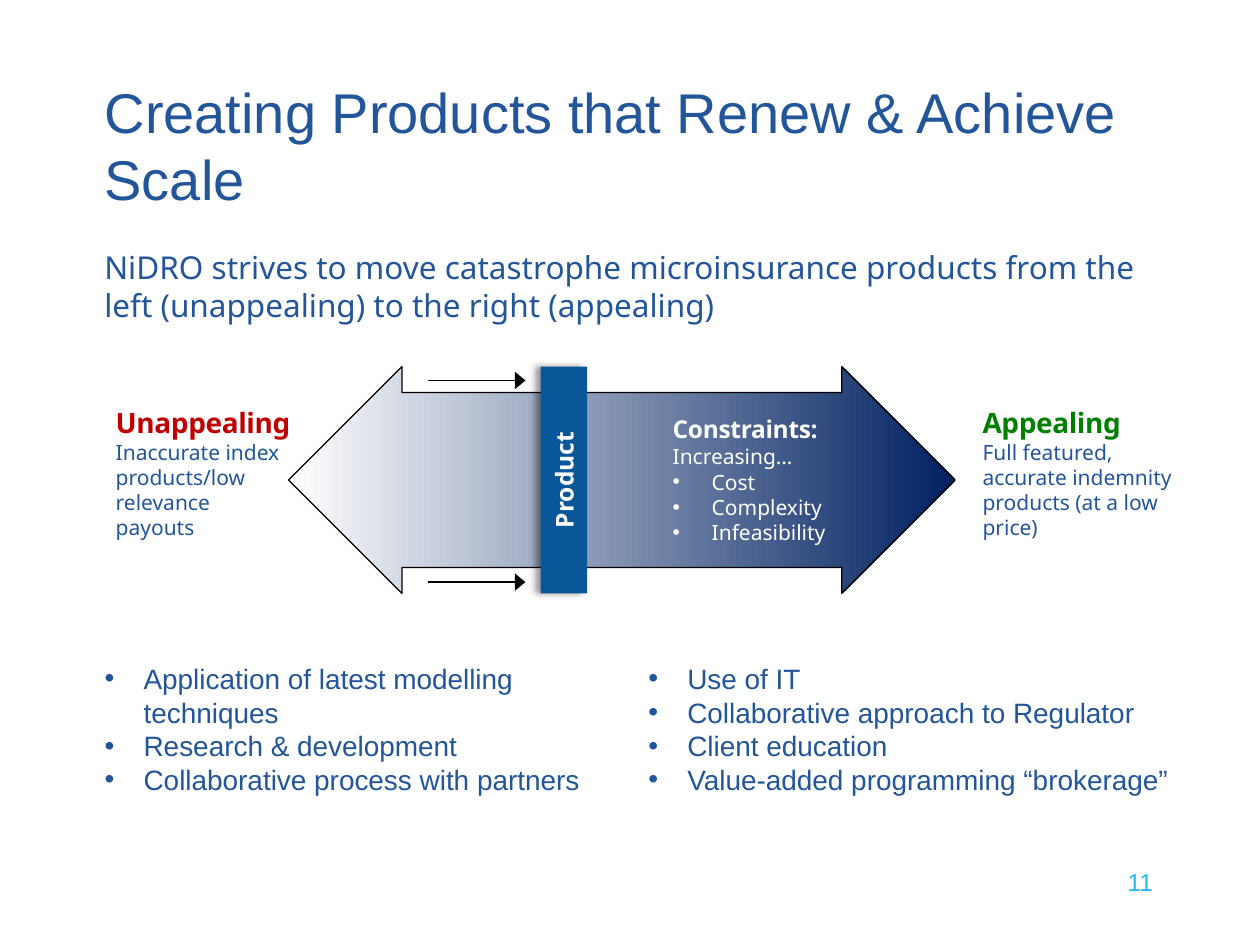
from lxml import etree
from pptx import Presentation
from pptx.dml.color import RGBColor
from pptx.enum import shapes, text
from pptx.oxml import parse_xml
from pptx.oxml.ns import nsdecls, qn
from pptx import util as u


class Theme:
    blue, bar, cyan = "225599", "095799", "22BBEE"
    red, green, navy = "C00000", "008000", "002060"
    black, white = "000000", "FFFFFF"
    sans, humanist = "Arial", "Noto Sans"
    title, lead, head, label, small = 32, 18, 16, 14, 12
    leading = 1.2
    indent = u.Inches(0.31)


prs = Presentation()
prs.slide_width, prs.slide_height = u.Inches(10), u.Inches(7.5)
col, row = prs.slide_width / 100, prs.slide_height / 75
slide = prs.slides.add_slide(prs.slide_layouts[1])


def grid(left, top, width, height):
    """Turn grid columns and rows into a position and a size."""
    return [round(n) for n in (left * col, top * row, width * col, height * row)]


def write(sp, lines, anchor=text.MSO_ANCHOR.TOP, align=text.PP_ALIGN.LEFT):
    """Fill a shape with (text, size, font, colour, bold, bulleted) lines."""
    tf = sp.text_frame
    tf.word_wrap = True
    tf.auto_size = text.MSO_AUTO_SIZE.NONE
    tf.vertical_anchor = anchor
    for i, (words, size, font, colour, bold, bulleted) in enumerate(lines):
        p = tf.add_paragraph() if i else tf.paragraphs[0]
        if bulleted:
            pPr = p._p.get_or_add_pPr()
            pPr.set("marL", str(Theme.indent))
            pPr.set("indent", str(-Theme.indent))
            etree.SubElement(pPr, qn("a:buFont")).set("typeface", Theme.sans)
            etree.SubElement(pPr, qn("a:buChar")).set("char", "•")
        p.alignment = align
        p.space_before = p.space_after = u.Pt(0)
        p.line_spacing = u.Pt(round(size * Theme.leading, 1))
        r = p.add_run()
        r.text = words
        r.font.size, r.font.name, r.font.bold = u.Pt(size), font, bold
        r.font.color.rgb = RGBColor.from_string(colour)


# Title and two-column list in the template's placeholders
title, body = slide.placeholders
title.left, title.top, title.width, title.height = grid(7.3, 8.4, 85, 6.2)
write(title, [("Creating Products that Renew & Achieve Scale",
               Theme.title, Theme.sans, Theme.blue, False, False)],
      text.MSO_ANCHOR.MIDDLE)

body.left, body.top, body.width, body.height = grid(7.3, 52, 88.3, 11.9)
actions = ["Application of latest modelling techniques", "Research & development",
           "Collaborative process with partners", "Use of IT",
           "Collaborative approach to Regulator", "Client education",
           "Value-added programming “brokerage”"]
write(body, [(a, Theme.head, Theme.sans, Theme.blue, False, True) for a in actions])
body.text_frame._txBody.bodyPr.set("numCol", "2")

# Double arrow from unappealing to appealing
band_top, band_height = 29.1, 18
sp = slide.shapes.add_shape(shapes.MSO_SHAPE.LEFT_RIGHT_ARROW,
                            *grid(22.9, band_top, 52.9, band_height))
sp.shadow.inherit = False
sp.adjustments[0], sp.adjustments[1] = 0.772, 0.5
sp.fill.gradient()
sp.fill.gradient_angle = 0
for stop, colour in zip(sp.fill.gradient_stops, (Theme.white, Theme.navy)):
    stop.color.rgb = RGBColor.from_string(colour)
sp.line.color.rgb = RGBColor.from_string(Theme.black)
sp.line.width = u.Pt(0.75)

# Product bar across the arrow, with its shadow to the left
bar = slide.shapes.add_shape(shapes.MSO_SHAPE.RECTANGLE,
                             *grid(42.9, band_top, 3.7, band_height))
bar.fill.solid()
bar.fill.fore_color.rgb = RGBColor.from_string(Theme.bar)
bar.line.fill.background()
bar._element.spPr.append(parse_xml(
    f'<a:effectLst {nsdecls("a")}><a:outerShdw blurRad="{u.Pt(4)}" dist="{u.Pt(3)}" '
    f'dir="10800000" rotWithShape="0"><a:srgbClr val="{Theme.black}">'
    '<a:alpha val="40000"/></a:srgbClr></a:outerShdw></a:effectLst>'))
write(bar, [("Product", Theme.label, Theme.humanist, Theme.white, True, False)],
      text.MSO_ANCHOR.MIDDLE, text.PP_ALIGN.CENTER)
bar.text_frame._txBody.bodyPr.set("vert", "vert270")

# Small arrows pushing the bar to the right
for y in (30.2, 46.2):
    x1, y1, length, _ = grid(34, y, 7.7, 0)
    cxn = slide.shapes.add_connector(shapes.MSO_CONNECTOR.STRAIGHT,
                                     x1, y1, x1 + length, y1)
    cxn.line.color.rgb = RGBColor.from_string(Theme.black)
    cxn.line.width = u.Pt(0.75)
    tip = etree.SubElement(cxn.line._get_or_add_ln(), qn("a:tailEnd"))
    tip.set("type", "triangle")
    tip.set("w", "lg")
    etree.SubElement(cxn._element.spPr, qn("a:effectLst"))

# Headed notes: place, heading, heading size and colour, text colour, text, bullets
notes = [
    ((8.2, 31.7, 16.1, 9.8), "Unappealing", Theme.head, Theme.red, Theme.blue,
     "Inaccurate index products/low relevance payouts", []),
    ((77, 31.7, 18.5, 11.8), "Appealing", Theme.head, Theme.green, Theme.blue,
     "Full featured, accurate indemnity products (at a low price)", []),
    ((52.4, 32.4, 19.9, 11.4), "Constraints:", Theme.label, Theme.white, Theme.white,
     "Increasing…", ["Cost", "Complexity", "Infeasibility"]),
]
for place, heading, size, accent, colour, words, bullets in notes:
    plain = (Theme.small, Theme.humanist, colour, False)
    note = slide.shapes.add_textbox(*grid(*place))
    write(note, [(heading, size, Theme.humanist, accent, True, False),
                 (words, *plain, False)] + [(b, *plain, True) for b in bullets])
    # Slightly tighter letters keep each heading on one line
    note.text_frame.paragraphs[0].runs[0]._r.get_or_add_rPr().set("spc", "-20")

# Lead sentence
write(slide.shapes.add_textbox(*grid(7.3, 19.2, 84.3, 7.1)),
      [("NiDRO strives to move catastrophe microinsurance products from the "
        "left (unappealing) to the right (appealing)",
        Theme.lead, Theme.humanist, Theme.blue, False, False)])

# Slide number
write(slide.shapes.add_textbox(*grid(71.7, 68.3, 20.8, 3.4)),
      [("11", Theme.label, Theme.sans, Theme.cyan, False, False)],
      align=text.PP_ALIGN.RIGHT)

prs.save("out.pptx")
